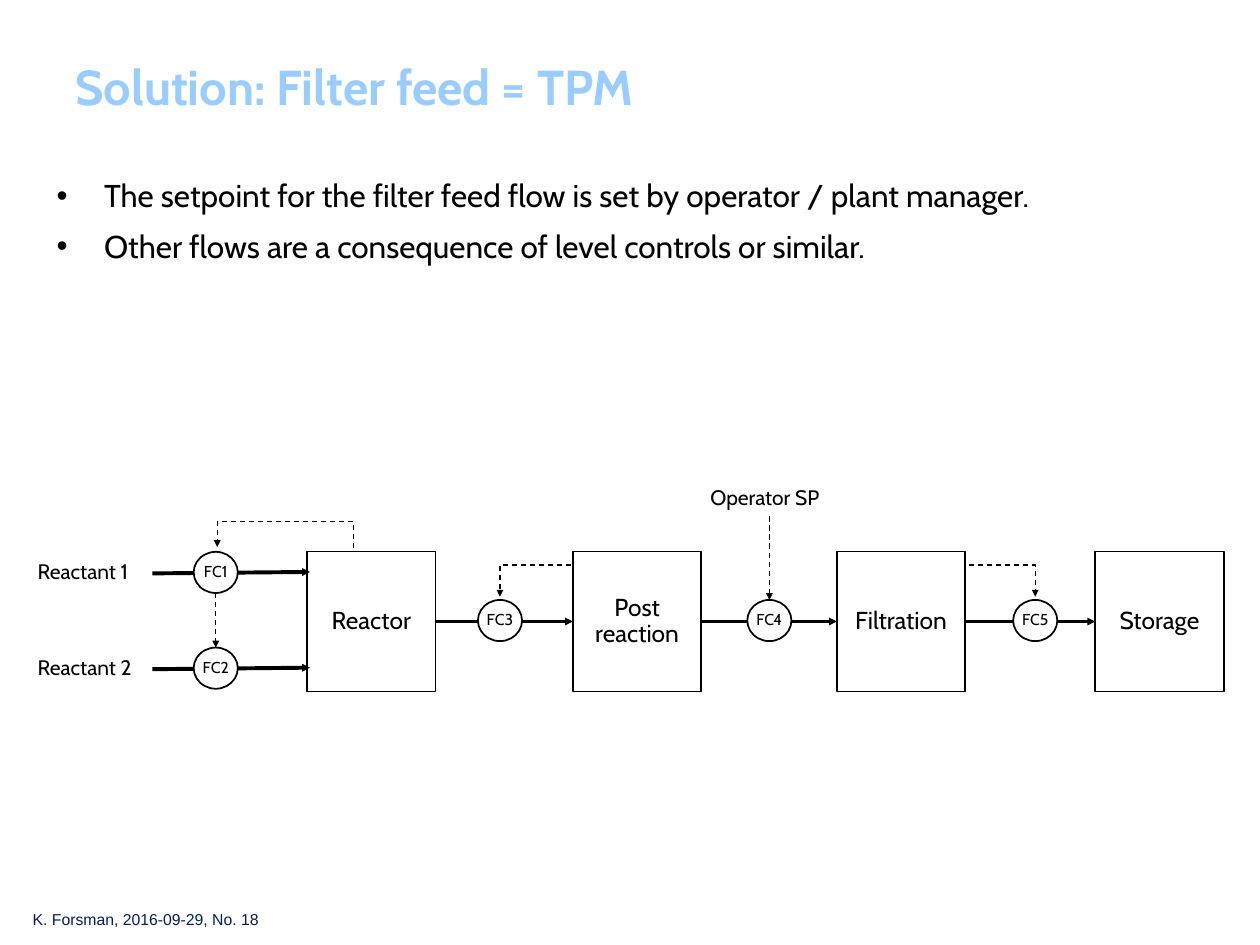
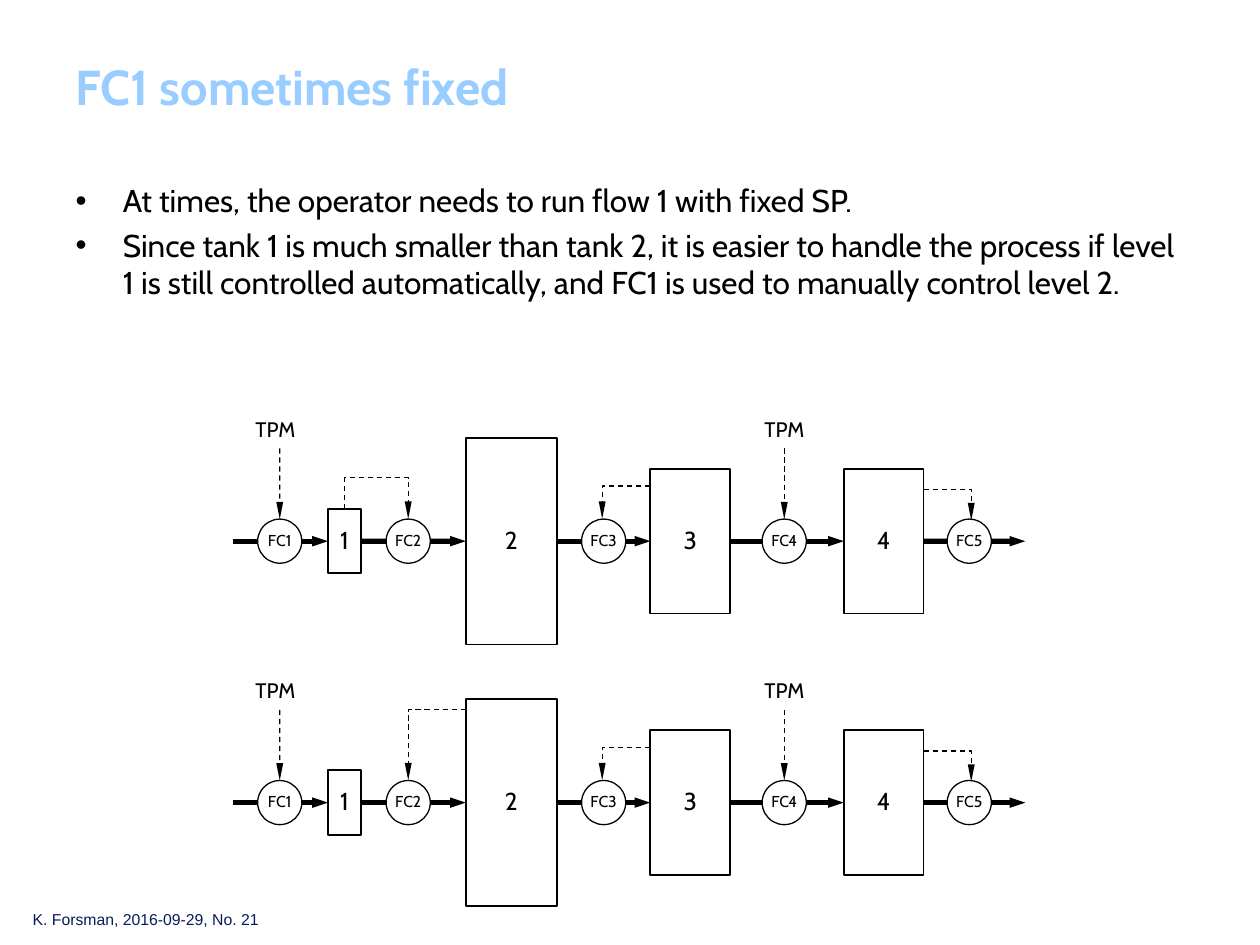
from lxml import etree
from pptx import Presentation
from pptx.dml.color import RGBColor
from pptx.enum.dml import MSO_LINE
from pptx.enum.shapes import MSO_CONNECTOR, MSO_SHAPE
from pptx.enum.text import MSO_ANCHOR, MSO_AUTO_SIZE, PP_ALIGN
from pptx.oxml.ns import qn
from pptx.util import Cm, Pt

BLACK = RGBColor(0x00, 0x00, 0x00)
WHITE = RGBColor(0xFF, 0xFF, 0xFF)
SKY = RGBColor(0x99, 0xCC, 0xFF)
NAVY = RGBColor(0x08, 0x1D, 0x58)

RECT, OVAL, STRAIGHT = MSO_SHAPE.RECTANGLE, MSO_SHAPE.OVAL, MSO_CONNECTOR.STRAIGHT
DASH = MSO_LINE.DASH
LEFT, CENTER = PP_ALIGN.LEFT, PP_ALIGN.CENTER
MIDDLE, TOP_ANCHOR = MSO_ANCHOR.MIDDLE, MSO_ANCHOR.TOP
FIT_SHAPE, NO_FIT = MSO_AUTO_SIZE.SHAPE_TO_FIT_TEXT, MSO_AUTO_SIZE.NONE
TOP, LEFT_SIDE, RIGHT_SIDE = 0, 1, 3  # connection sites


class Deck:
    """Holds the style and the current slide; all lengths are in cm."""
    font = "Cabin"
    signal_width = 0.75

    def __init__(self):
        self.prs = Presentation()
        self.prs.slide_width, self.prs.slide_height = Cm(25.4), Cm(19.05)
        self.slide = None

    def new_slide(self, title, number, bullets, place, space_after=0):
        self.slide = self.prs.slides.add_slide(self.prs.slide_layouts[1])
        self.fill_placeholder(self.slide.shapes.title, title, (1.27, 0.76, 22.63, 1.96),
                              28, SKY, MIDDLE, bold=True)
        tf = self.fill_placeholder(self.slide.placeholders[1], "\n".join(bullets),
                                   place, 18, BLACK, TOP_ANCHOR)
        for i, p in enumerate(tf.paragraphs):
            p.space_before, p.space_after = Pt(3.6 if i else 0), Pt(space_after)
        self.label(f"K. Forsman, 2016-09-29, No. {number}", 0.41, 18.21, 5.16,
                   size=9, color=NAVY, font="Arial", spacing=1.0)

    def fill_placeholder(self, sp, text, place, size, color, anchor, bold=False):
        sp.left, sp.top, sp.width, sp.height = map(Cm, place)
        tf = sp.text_frame
        tf.text = text
        tf.auto_size, tf.vertical_anchor = NO_FIT, anchor
        self.format_text(tf, size, color, LEFT, bold=bold)
        return tf

    def format_text(self, tf, size, color, align, font=None, spacing=1.0, bold=False):
        for p in tf.paragraphs:
            p.alignment, p.line_spacing = align, spacing
            for r in p.runs:
                r.font.name, r.font.size = font or self.font, Pt(size)
                r.font.color.rgb, r.font.bold = color, bold

    def label(self, text, x, y, w, size=12, color=BLACK, font=None, spacing=0.9):
        sp = self.slide.shapes.add_textbox(Cm(x), Cm(y), Cm(w), Cm(0.71))
        tf = sp.text_frame
        tf.text = text
        tf.word_wrap, tf.auto_size = False, FIT_SHAPE
        self.format_text(tf, size, color, LEFT, font, spacing)

    def node(self, kind, text, x, y, w, h, size, line=1.0):
        """Outlined shape whose left edge is x and whose centre height is y."""
        sp = self.slide.shapes.add_shape(kind, Cm(x), Cm(y - h / 2), Cm(w), Cm(h))
        sp.shadow.inherit = False
        sp.fill.solid()
        sp.fill.fore_color.rgb = WHITE
        sp.line.color.rgb, sp.line.width = BLACK, Pt(line)
        tf = sp.text_frame
        tf.text = text
        tf.word_wrap, tf.vertical_anchor = False, MIDDLE
        self.format_text(tf, size, BLACK, CENTER, spacing=0.9)
        return sp

    def box(self, text, x, y, w, h):
        return self.node(RECT, text, x, y, w, h, 14)

    def controller(self, text, x, y, h=0.89, line=0.75):
        return self.node(OVAL, text, x - 0.445, y, 0.89, h, 9, line)

    def style_line(self, sp, width, dash, head):
        sp.line.color.rgb, sp.line.width = BLACK, Pt(width)
        if dash:
            sp.line.dash_style = dash
        etree.SubElement(sp.element.spPr.get_or_add_ln(), qn("a:tailEnd"),
                         type="triangle", w="sm", len=head)

    def arrow(self, start, end, width, head, start_at=None, end_at=None, dash=None):
        """Straight arrow; start_at and end_at are (shape, site) joints."""
        sp = self.slide.shapes.add_connector(STRAIGHT, *map(Cm, start + end))
        if start_at:
            sp.begin_connect(*start_at)
        if end_at:
            sp.end_connect(*end_at)
        self.style_line(sp, width, dash, head)
        etree.SubElement(sp.element.spPr, qn("a:effectLst"))

    def signal(self, points, head):
        """Dashed control signal along several corners."""
        pts = [(Cm(x), Cm(y)) for x, y in points]
        fb = self.slide.shapes.build_freeform(*pts[0])
        fb.add_line_segments(pts[1:], close=False)
        sp = fb.convert_to_shape()
        sp.shadow.inherit = False
        sp.fill.background()
        self.style_line(sp, self.signal_width, DASH, head)


def filter_feed_slide(deck):
    deck.new_slide("Solution: Filter feed = TPM", 18, [
        "The setpoint for the filter feed flow is set by operator / plant manager.",
        "Other flows are a consequence of level controls or similar.",
    ], (0.89, 3.43, 23.67, 4.11), space_after=3.6)
    y, w, h, fc_h = 12.53, 2.59, 2.82, 0.83
    head, flow = "sm", 2.25

    # Process units and the flows between them
    units = {"Reactor": 6.19, "Post\nreaction": 11.55, "Filtration": 16.87, "Storage": 22.08}
    boxes = [deck.box(name, x, y, w, h) for name, x in units.items()]
    for a, b in zip(boxes, boxes[1:]):
        deck.arrow((0, y), (1, y), flow, head, (a, RIGHT_SIDE), (b, LEFT_SIDE))

    # Reactant feeds
    feed_ys = (11.54, 13.47)
    for i, feed_y in enumerate(feed_ys, 1):
        deck.arrow((3.07, feed_y + 0.02), (6.25, feed_y - 0.01), flow, head)
        deck.controller(f"FC{i}", 4.35, feed_y, fc_h, 1)
        deck.label(f"Reactant {i}", 0.51, feed_y - 0.34, 2.57)

    # Flow controllers between the units
    fcs = [deck.controller(f"FC{i}", x, y - 0.02, fc_h, 1)
           for i, x in enumerate((10.08, 15.51, 20.87), 3)]

    # Control signals
    deck.signal([(7.13, 11.05), (7.13, 10.51), (4.38, 10.51), (4.38, 11.03)], head)
    deck.arrow((4.35, feed_ys[0] + fc_h / 2), (4.35, feed_ys[1] - fc_h / 2),
               deck.signal_width, head, dash=DASH)
    for start_x, fc_x in ((11.51, 10.08), (19.53, 20.87)):
        deck.signal([(start_x, 11.39), (fc_x, 11.39), (fc_x, 12.03)], head)
    deck.arrow((15.51, 10.41), (15.51, 12.09), deck.signal_width, head,
               end_at=(fcs[1], TOP), dash=DASH)
    deck.label("Operator SP", 14.07, 9.7, 2.9)


def tank_line(deck, y, fc2_signal):
    """One row of four tanks centred on height y; fc2_signal is relative to y."""
    flow, flow_head, signal_head = 3, "med", "lg"

    # Tanks: left, width, height
    sizes = [(6.61, 0.67, 1.3), (9.39, 1.84, 4.17), (13.11, 1.61, 2.92), (17.01, 1.61, 2.92)]
    tanks = [deck.box(str(i), x, y, w, h) for i, (x, w, h) in enumerate(sizes, 1)]

    # Flows
    starts = [None] + [(tank, RIGHT_SIDE) for tank in tanks]
    ends = [(tank, LEFT_SIDE) for tank in tanks] + [None]
    for start_at, end_at in zip(starts, ends):
        deck.arrow((4.7, y), (20.67, y), flow, flow_head, start_at, end_at)

    # Controllers
    fcs = [deck.controller(f"FC{i}", x, y)
           for i, x in enumerate((5.64, 8.23, 12.17, 15.81, 19.54), 1)]

    # Level control signals
    for points in (fc2_signal,
                   [(13.11, -1.11), (12.14, -1.11), (12.14, -0.45)],
                   [(18.62, -1.04), (19.58, -1.04), (19.58, -0.42)]):
        deck.signal([(x, y + dy) for x, dy in points], signal_head)

    # Throughput manipulators
    for fc, x, label_x in ((fcs[0], 5.64, 4.9), (fcs[3], 15.81, 15.16)):
        deck.label("TPM", label_x, y - 2.58, 1.32)
        deck.arrow((x, y - 1.87), (x, y - 0.45), deck.signal_width, signal_head,
                   end_at=(fc, TOP), dash=DASH)


def fixed_flow_slide(deck):
    deck.new_slide("FC1 sometimes fixed", 21, [
        "At times, the operator needs to run flow 1 with fixed SP.",
        "Since tank 1 is much smaller than tank 2, it is easier to handle the process "
        "if level 1 is still controlled automatically, and FC1 is used to manually "
        "control level 2.",
    ], (1.27, 3.53, 22.86, 3.81))
    tank_line(deck, 10.91, [(6.95, -0.65), (6.95, -1.28), (8.23, -1.28), (8.23, -0.45)])
    tank_line(deck, 16.18, [(9.39, -1.87), (8.23, -1.87), (8.23, -0.45)])


def main():
    deck = Deck()
    filter_feed_slide(deck)
    fixed_flow_slide(deck)
    deck.prs.save("out.pptx")


if __name__ == "__main__":
    main()
